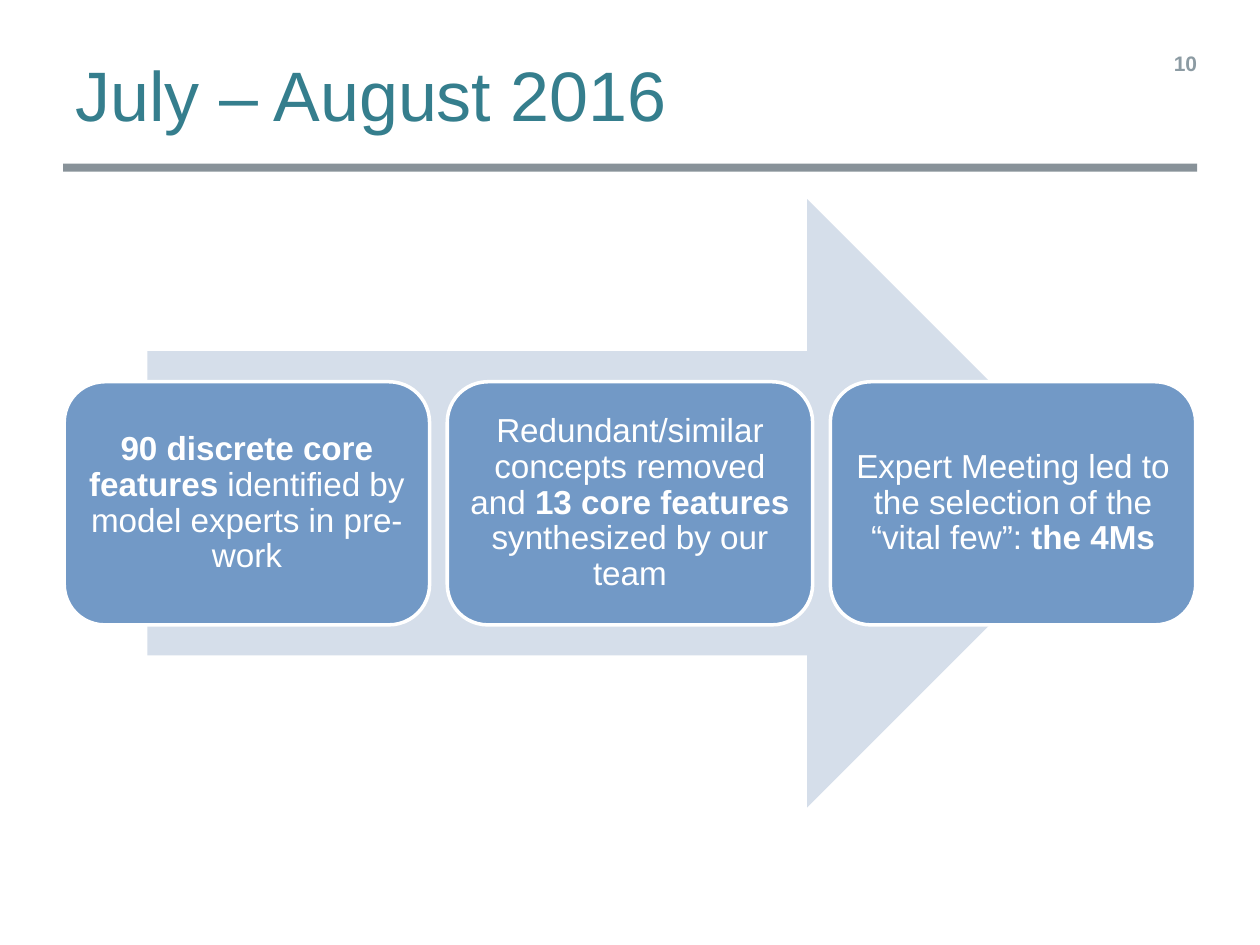
import pptx
import pptx.dml.color
import pptx.enum.shapes
import pptx.enum.text
import pptx.oxml
import pptx.oxml.ns
import pptx.util
from lxml import etree

Inches = pptx.util.Inches
Pt = pptx.util.Pt
RGBColor = pptx.dml.color.RGBColor
PP_ALIGN = pptx.enum.text.PP_ALIGN
MIDDLE = pptx.enum.text.MSO_ANCHOR.MIDDLE
SHAPES = pptx.enum.shapes.MSO_SHAPE
qn = pptx.oxml.ns.qn

FONT = "Arial"
TEAL = RGBColor(0x35, 0x7E, 0x8D)
SLATE = RGBColor(0x45, 0x56, 0x60)
GRAY = RGBColor(0x8C, 0x9B, 0xA3)
PALE_BLUE = RGBColor(0xD5, 0xDE, 0xEA)
BLUE = RGBColor(0x72, 0x99, 0xC6)
WHITE = RGBColor(0xFF, 0xFF, 0xFF)

# Each step is a list of (text, bold) pieces
STEPS = [
    [("90 discrete core features ", True),
     ("identified by model experts in pre-work", False)],
    [("Redundant/similar concepts removed and ", False),
     ("13 core features ", True),
     ("synthesized by our team", False)],
    [("Expert Meeting led to the selection of the “vital few”:", False),
     (" the 4Ms", True)],
]
STEP_LEFT, STEP_TOP = 0.51, 3.03
STEP_WIDTH, STEP_HEIGHT = 2.9, 1.93
STEP_PITCH = 3.04


def style_font(font, size, color, bold=False):
    font.name = FONT
    font.size = Pt(size)
    font.color.rgb = color
    font.bold = bold


def add_label(slide, box, text, size, color, bold=False, align=PP_ALIGN.LEFT):
    label = slide.shapes.add_textbox(*map(Inches, box))
    frame = label.text_frame
    frame.word_wrap = True
    frame.text = text
    paragraph = frame.paragraphs[0]
    paragraph.alignment = align
    style_font(paragraph.runs[0].font, size, color, bold)
    return label


def add_rule(slide, left, right, y):
    rule = slide.shapes.add_connector(
        pptx.enum.shapes.MSO_CONNECTOR.STRAIGHT,
        Inches(left), Inches(y), Inches(right), Inches(y))
    rule.line.color.rgb = SLATE
    rule.line.width = Pt(4.5)
    properties = rule._element.spPr
    color = properties.find(".//" + qn("a:srgbClr"))
    etree.SubElement(color, qn("a:alpha")).set("val", "64000")
    etree.SubElement(properties, qn("a:effectLst"))


def add_block(slide, kind, box, fill):
    block = slide.shapes.add_shape(kind, *map(Inches, box))
    block.shadow.inherit = False
    block.fill.solid()
    block.fill.fore_color.rgb = fill
    block.line.fill.background()
    return block


def add_step(slide, index, pieces):
    box = (STEP_LEFT + index * STEP_PITCH, STEP_TOP, STEP_WIDTH, STEP_HEIGHT)
    step = add_block(slide, SHAPES.ROUNDED_RECTANGLE, box, BLUE)
    step.line.color.rgb = WHITE
    step.line.width = Pt(2)

    frame = step.text_frame
    frame.word_wrap = True
    frame.vertical_anchor = MIDDLE
    frame.margin_left = frame.margin_right = Inches(0.08)
    frame.margin_top = frame.margin_bottom = Inches(0.08)
    paragraph = frame.paragraphs[0]
    paragraph.alignment = PP_ALIGN.CENTER
    paragraph.line_spacing = 0.9
    for text, bold in pieces:
        run = paragraph.add_run()
        run.text = text
        style_font(run.font, 19, WHITE, bold)


def main():
    deck = pptx.Presentation()
    deck.slide_width, deck.slide_height = Inches(10), Inches(7.5)
    slide = deck.slides.add_slide(deck.slide_layouts[6])

    # Heading
    add_rule(slide, 0.5, 9.5, 1.33)
    title = add_label(slide, (0.5, 0.33, 9, 0.83), "July – August 2016", 40, TEAL)
    title.text_frame.vertical_anchor = MIDDLE

    # Process arrow with its steps
    add_block(slide, SHAPES.RIGHT_ARROW, (1.17, 1.58, 7.65, 4.83), PALE_BLUE)
    for index, pieces in enumerate(STEPS):
        add_step(slide, index, pieces)

    # Page number
    add_label(slide, (9, 0.35, 0.6, 0.4), "10", 12, GRAY, True, PP_ALIGN.RIGHT)

    deck.save("out.pptx")


if __name__ == "__main__":
    main()
